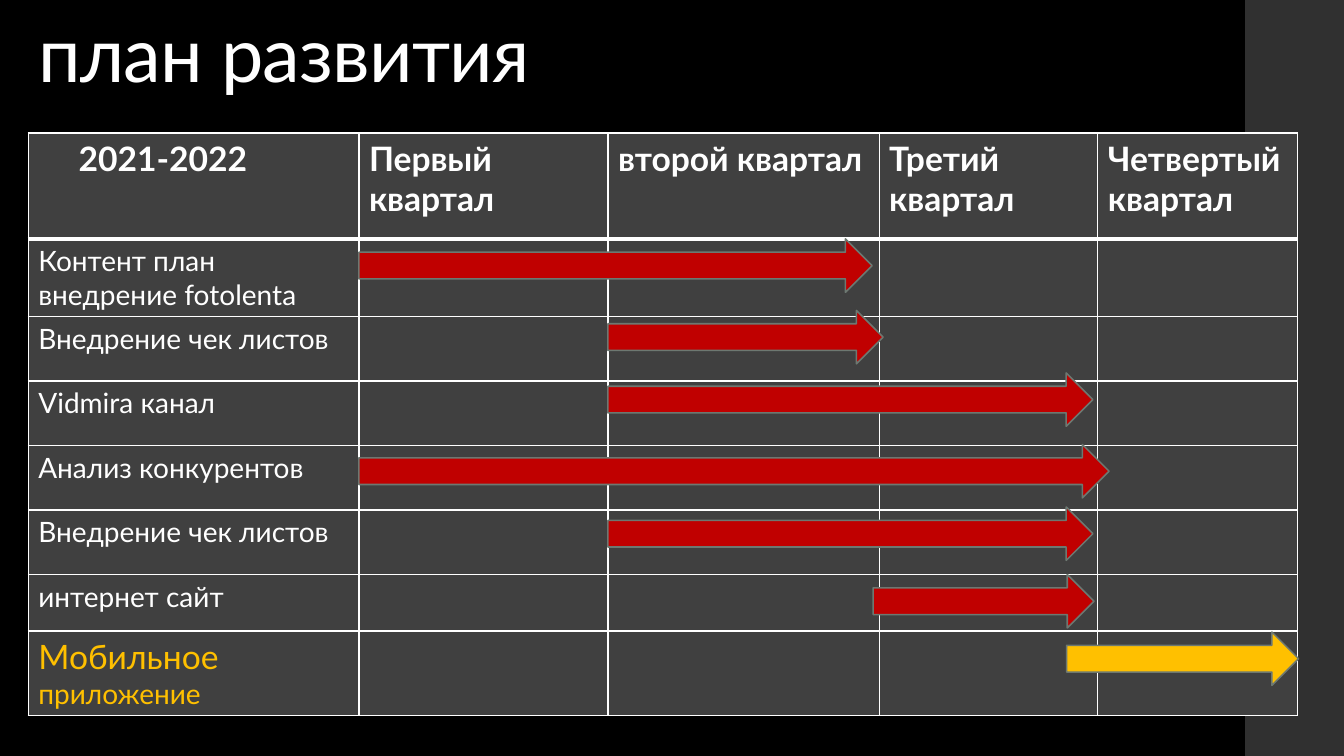
"""Build the quarterly development plan slide: a table with timeline arrows."""
from dataclasses import dataclass

from lxml.etree import SubElement
from pptx import Presentation
from pptx.dml.color import RGBColor
from pptx.enum.shapes import MSO_SHAPE
from pptx.enum.text import MSO_ANCHOR, PP_ALIGN
from pptx.oxml.ns import qn
from pptx.util import Inches, Pt


@dataclass(frozen=True)
class Theme:
    font: str = "Lato"
    background: RGBColor = RGBColor(0, 0, 0)
    band: RGBColor = RGBColor(0x30, 0x30, 0x30)
    cell: RGBColor = RGBColor(0x40, 0x40, 0x40)
    text: RGBColor = RGBColor(0xFF, 0xFF, 0xFF)
    outline: RGBColor = RGBColor(0x6D, 0x78, 0x71)
    planned: RGBColor = RGBColor(0xC0, 0, 0)
    highlight: RGBColor = RGBColor(0xFF, 0xC0, 0)
    title_size: Pt = Pt(54)
    header_size: Pt = Pt(24)
    body_size: Pt = Pt(20)


theme = Theme()


def style_font(font, size, color, bold=False):
    font.name = theme.font
    font.size = size
    font.bold = bold
    font.color.rgb = color


def add_border(cell, side, width):
    line = SubElement(cell._tc.get_or_add_tcPr(), qn(f"a:ln{side}"), w=str(width))
    fill = SubElement(line, qn("a:solidFill"))
    SubElement(fill, qn("a:srgbClr"), val=str(theme.text))


deck = Presentation()
deck.slide_width = Inches(13.33)
deck.slide_height = Inches(7.5)
page = deck.slides.add_slide(deck.slide_layouts[5])
page.background.fill.solid()
page.background.fill.fore_color.rgb = theme.background

band = page.shapes.add_shape(
    MSO_SHAPE.RECTANGLE, Inches(12.35), 0, Inches(0.98), Inches(7.5))
band.shadow.inherit = False
band.fill.solid()
band.fill.fore_color.rgb = theme.band
band.line.fill.background()

title = page.shapes.title
title.left, title.top = Inches(0.28), Inches(0.16)
title.width, title.height = Inches(10.72), Inches(0.87)
title.text_frame.text = "план развития"
title.text_frame.vertical_anchor = MSO_ANCHOR.BOTTOM
para = title.text_frame.paragraphs[0]
para.alignment = PP_ALIGN.LEFT
para.line_spacing = 0.9
style_font(para.font, theme.title_size, theme.text)
para.runs[0]._r.get_or_add_rPr().set("spc", "-50")

headers = ["2021-2022", "Первый квартал", "второй квартал",
           "Третий квартал", "Четвертый квартал"]
tasks = ["Контент план внедрение fotolenta", "Внедрение чек листов",
         "Vidmira канал", "Анализ конкурентов", "Внедрение чек листов",
         "интернет сайт", "Мобильное приложение"]
column_widths = [3.28, 2.47, 2.69, 2.17, 1.98]
row_heights = [1.05, 0.77, 0.64, 0.64, 0.64, 0.64, 0.56, 0.84]

plan = page.shapes.add_table(
    len(row_heights), len(column_widths), Inches(0.28), Inches(1.32),
    Inches(sum(column_widths)), Inches(sum(row_heights))).table
for column, width in zip(plan.columns, column_widths):
    column.width = Inches(width)
for row, height in zip(plan.rows, row_heights):
    row.height = Inches(height)

for row_index, row in enumerate(plan.rows):
    for column_index, cell in enumerate(row.cells):
        for side in "LRTB":
            at_header_edge = (row_index, side) in [(0, "B"), (1, "T")]
            add_border(cell, side, Pt(3 if at_header_edge else 1))
        cell.fill.solid()
        cell.fill.fore_color.rgb = theme.cell
        if row_index == 0:
            cell.text = headers[column_index]
            style_font(cell.text_frame.paragraphs[0].font,
                       theme.header_size, theme.text, bold=True)
        elif column_index == 0 and row_index < len(tasks):
            cell.text = tasks[row_index - 1]
            style_font(cell.text_frame.paragraphs[0].font,
                       theme.body_size, theme.text)

plan.cell(0, 0).margin_left = Inches(0.5)

app_para = plan.cell(len(tasks), 0).text_frame.paragraphs[0]
first_word, second_word = tasks[-1].split()
for words, size in [(first_word, theme.header_size),
                    (" " + second_word, theme.body_size)]:
    span = app_para.add_run()
    span.text = words
    style_font(span.font, size, theme.highlight)

arrows = [
    (3.56, 2.37, 5.09, theme.planned),
    (6.03, 3.08, 2.73, theme.planned),
    (6.03, 3.7, 4.81, theme.planned),
    (3.56, 4.41, 7.44, theme.planned),
    (6.03, 5.03, 4.81, theme.planned),
    (8.66, 5.7, 2.19, theme.planned),
    (10.58, 6.27, 2.3, theme.highlight),
]
for left, top, width, color in arrows:
    arrow = page.shapes.add_shape(
        MSO_SHAPE.RIGHT_ARROW, Inches(left), Inches(top), Inches(width), Inches(0.53))
    arrow.shadow.inherit = False
    arrow.fill.solid()
    arrow.fill.fore_color.rgb = color
    arrow.line.color.rgb = theme.outline
    arrow.line.width = Pt(1.1)

deck.save("out.pptx")
